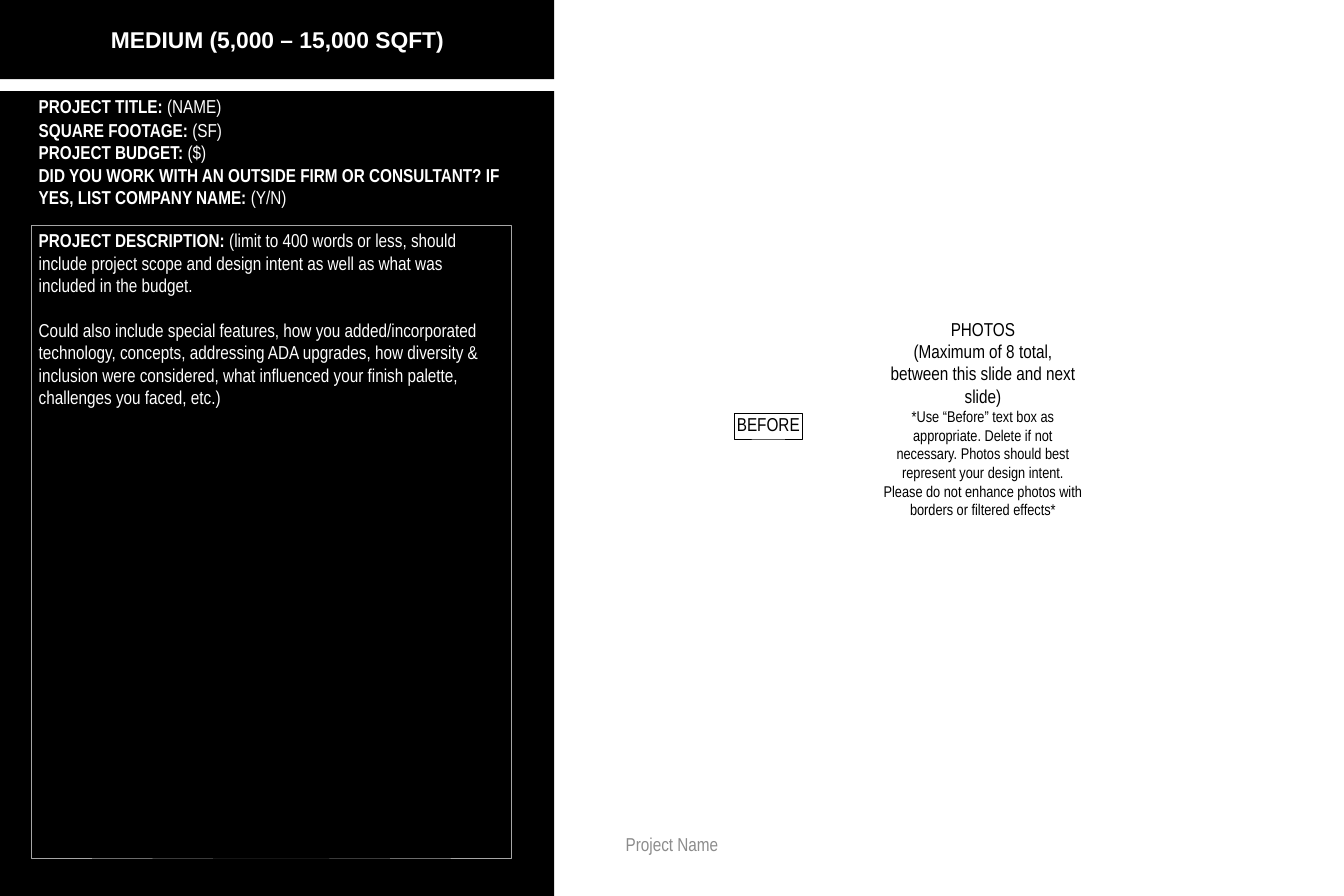
from pptx import Presentation
from pptx.dml.color import RGBColor
from pptx.enum.shapes import MSO_SHAPE
from pptx.enum.text import MSO_ANCHOR, PP_ALIGN
from pptx.util import Inches, Pt

BLACK = RGBColor(0x00, 0x00, 0x00)
WHITE = RGBColor(0xFF, 0xFF, 0xFF)
FOOTER_GRAY = RGBColor(0x8C, 0x8C, 0x8C)
FRAME_GRAY = RGBColor(0xA6, 0xA6, 0xA6)

PANEL_WIDTH = 7.42
FIELD_LEFT, FIELD_WIDTH = 0.42, 6.42


class SlideBuilder:
    """Draws elements on one slide in a shared style."""

    font_name = "Arial Narrow"
    font_size = 18

    def __init__(self, slide):
        self.slide = slide

    def rectangle(self, left, top, width, height, fill=None, line=None, line_width=0.75):
        shape = self.slide.shapes.add_shape(
            MSO_SHAPE.RECTANGLE, *map(Inches, (left, top, width, height)))
        shape.shadow.inherit = False
        if fill is None:
            shape.fill.background()
        else:
            shape.fill.solid()
            shape.fill.fore_color.rgb = fill
        if line is None:
            shape.line.fill.background()
        else:
            shape.line.color.rgb = line
            shape.line.width = Pt(line_width)
        return shape

    def text_box(self, left, top, width, height):
        return self.slide.shapes.add_textbox(*map(Inches, (left, top, width, height)))

    def frame(self, shape, margin=None):
        text_frame = shape.text_frame
        text_frame.word_wrap = True
        text_frame.vertical_anchor = MSO_ANCHOR.TOP
        if margin is not None:
            text_frame.margin_left = text_frame.margin_right = Inches(margin)
            text_frame.margin_top = text_frame.margin_bottom = Inches(margin)
        return text_frame

    def style(self, paragraph, color, alignment, size=None, font_name=None):
        paragraph.alignment = alignment
        paragraph.font.name = font_name or self.font_name
        paragraph.font.size = Pt(size or self.font_size)
        paragraph.font.color.rgb = color

    def centered(self, shape, lines, color=BLACK, margin=0, font_name=None, bold=False):
        """Writes (text, size) lines, centred."""
        text_frame = self.frame(shape, margin)
        for index, (text, size) in enumerate(lines):
            paragraph = text_frame.add_paragraph() if index else text_frame.paragraphs[0]
            paragraph.text = text
            self.style(paragraph, color, PP_ALIGN.CENTER, size, font_name)
            paragraph.font.bold = bold

    def fields(self, shape, entries, gap=0):
        """Writes (bold label, plain value) entries, left aligned."""
        text_frame = self.frame(shape)
        for index, (label, value) in enumerate(entries):
            paragraph = text_frame.add_paragraph() if index else text_frame.paragraphs[0]
            self.style(paragraph, WHITE, PP_ALIGN.LEFT)
            paragraph.space_before = Pt(gap if index else 0)
            if label:
                run = paragraph.add_run()
                run.text = label + " "
                run.font.bold = True
            paragraph.add_run().text = value


def main():
    presentation = Presentation()
    presentation.slide_width = Inches(18)
    presentation.slide_height = Inches(12)
    builder = SlideBuilder(presentation.slides.add_slide(presentation.slide_layouts[6]))

    # Black panels on the left
    builder.rectangle(0, -0.01, PANEL_WIDTH, 1.07, fill=BLACK)
    builder.rectangle(0, 1.22, PANEL_WIDTH, 10.78, fill=BLACK)

    # Footer
    builder.centered(builder.text_box(6.12, 11.16, 5.76, 0.6),
                     [("Project Name", 18)], FOOTER_GRAY)

    # Photo area
    builder.centered(builder.rectangle(9.83, 5.53, 0.92, 0.35, line=BLACK),
                     [("BEFORE", 18)])
    builder.centered(builder.text_box(11.83, 4.25, 2.67, 2.92), [
        ("PHOTOS", 18),
        ("(Maximum of 8 total, between this slide and next slide)", 18),
        ("*Use “Before” text box as appropriate. Delete if not necessary. Photos should "
         "best represent your design intent. Please do not enhance photos with borders "
         "or filtered effects*", 15),
    ])

    # Category title
    builder.centered(builder.text_box(0.29, 0.3, 6.85, 0.47),
                     [("MEDIUM (5,000 – 15,000 SQFT)", 22)],
                     WHITE, margin=0.05, font_name="Arial", bold=True)

    # Project facts
    builder.fields(builder.text_box(FIELD_LEFT, 1.22, FIELD_WIDTH, 0.71),
                   [("PROJECT TITLE:", "(NAME)")])
    builder.fields(builder.text_box(FIELD_LEFT, 1.54, FIELD_WIDTH, 1.31), [
        ("SQUARE FOOTAGE:", "(SF)"),
        ("PROJECT BUDGET:", "($)"),
        ("DID YOU WORK WITH AN OUTSIDE FIRM OR CONSULTANT? IF YES, LIST COMPANY NAME:",
         "(Y/N)"),
    ])

    # Project description
    description = builder.rectangle(FIELD_LEFT, 3.02, FIELD_WIDTH, 8.47,
                                    line=FRAME_GRAY, line_width=0.25)
    builder.fields(description, [
        ("PROJECT DESCRIPTION:",
         "(limit to 400 words or less, should include project scope and design intent "
         "as well as what was included in the budget."),
        ("",
         "Could also include special features, how you added/incorporated technology, "
         "concepts, addressing ADA upgrades, how diversity & inclusion were considered, "
         "what influenced your finish palette, challenges you faced, etc.)"),
    ], gap=21.6)

    presentation.save("out.pptx")


if __name__ == "__main__":
    main()
